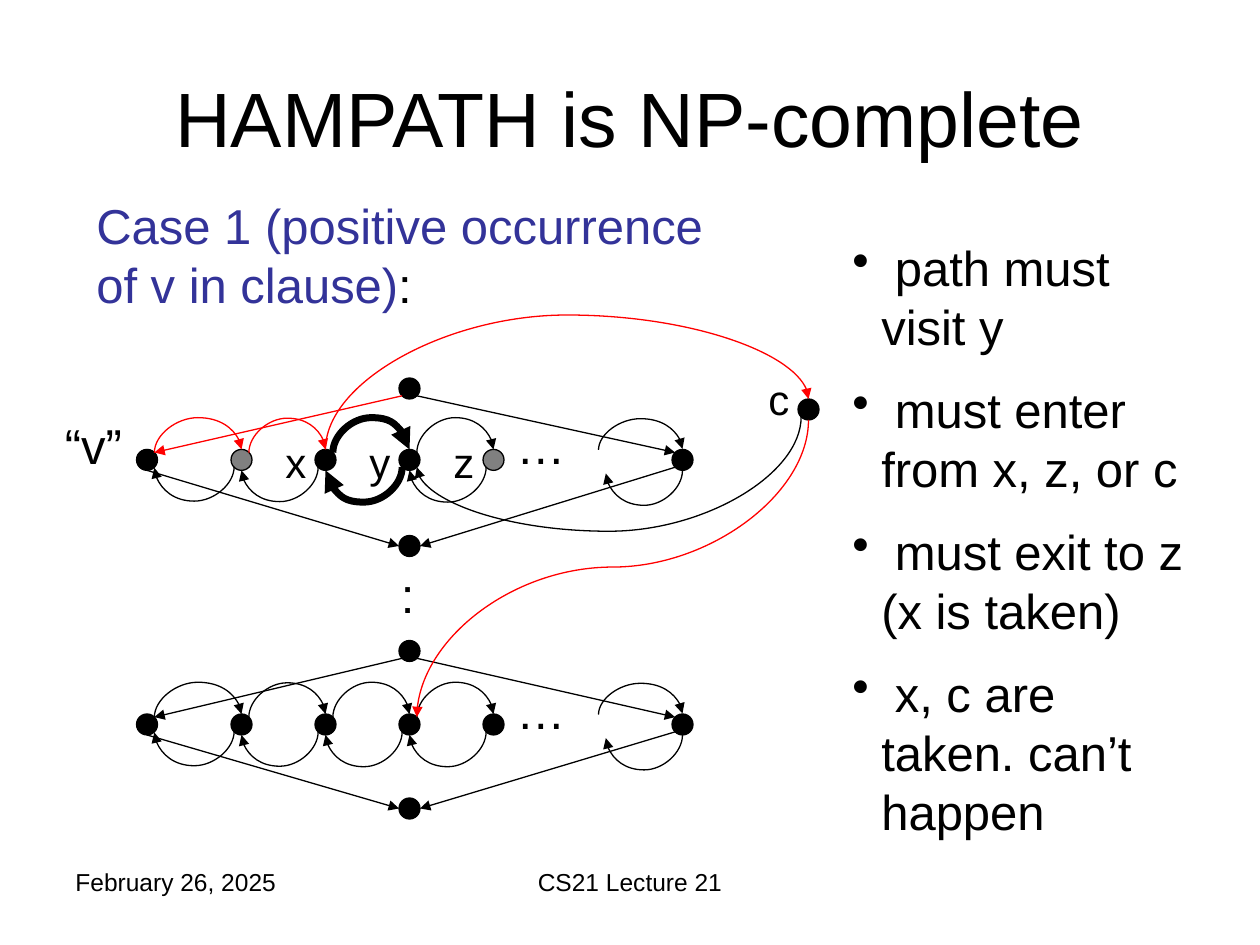
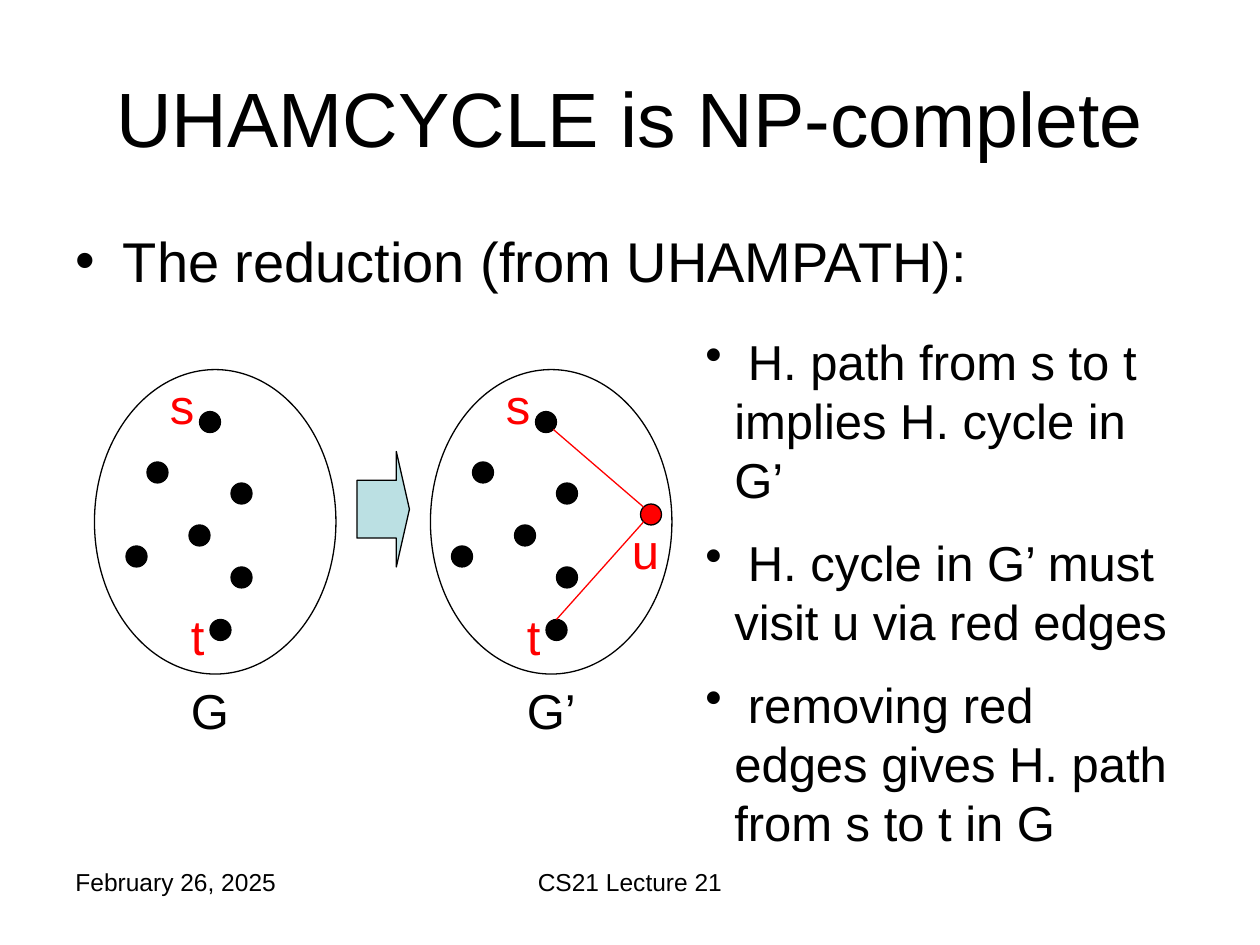
from lxml.etree import SubElement
from pptx import Presentation
from pptx.dml.color import RGBColor
from pptx.enum.shapes import MSO_CONNECTOR, MSO_SHAPE
from pptx.enum.text import MSO_ANCHOR, MSO_AUTO_SIZE, PP_ALIGN
from pptx.oxml.ns import qn
from pptx.util import Inches, Pt

CELLS_PER_INCH = 12
FONT = "Arial"
COLORS = {"ink": "000000", "red": "FF0000", "gray": "808080", "blue": "333399", "arrow": "BBE0E3"}

FOOTERS = [
    ("February 26, 2025", (6, 82, 28, 6.2), PP_ALIGN.LEFT),
    ("CS21 Lecture 21", (41, 82, 38, 6.2), PP_ALIGN.CENTER),
]
TITLE_BOX = (6, 3.6, 108, 15)

HAMPATH = {
    "title": "HAMPATH is NP-complete",
    "case": [("Case 1 (positive occurrence of v in clause)", "blue"), (":", "ink")],
    "notes": [
        " path must visit y",
        " must enter from x, z, or c",
        " must exit to z (x is taken)",
        " x, c are taken. can’t happen",
    ],
    "labels": [
        ("c", (72, 35, 4, 6), 24),
        ("x", (26, 41, 4, 6), 24),
        ("y", (34, 41, 4, 6), 24),
        ("z", (42, 41, 4, 6), 24),
        ("“v”", (5, 39, 9, 6.8), 28),
        (":", (37, 53.2, 5, 6.8), 28),
    ],
}
CHAIN_COLUMNS = [13, 22, 30, 38, 46, 64]
HUB_COLUMN = 38
CHAINS = [
    {"apex": 36, "row": 42.8, "base": 51, "gray": {1, 4}, "red": {0, 1}, "thick": 2, "apex_link": "red"},
    {"apex": 61, "row": 68, "base": 76, "gray": set(), "red": set(), "thick": None, "apex_link": "ink"},
]
CLAUSE = (76, 38)

UHAMCYCLE = {
    "title": "UHAMCYCLE is NP-complete",
    "body": "The reduction (from UHAMPATH):",
    "notes": [
        " H. path from s to t implies H. cycle in G’",
        " H. cycle in G’ must visit u via red edges",
        " removing red edges gives H. path from s to t in G",
    ],
    "graphs": [("G", 0, 0), ("G’", 32, 31)],
}
S_DOT, T_DOT, U_DOT = (19, 39.2), (20, 59), (61, 48)
INNER_DOTS = [(14, 44), (22, 46), (18, 50), (12, 52), (22, 54)]

DOT = 2
ANCHORS = {
    "top": (1, 0), "bottom": (1, 2), "left": (0, 1), "right": (2, 1),
    "top_left": (0.3, 0.3), "top_right": (1.7, 0.3),
    "bottom_left": (0.3, 1.7), "bottom_right": (1.7, 1.7),
}


def cells(*values):
    return [Inches(value / CELLS_PER_INCH) for value in values]


def rgb(name):
    return RGBColor.from_string(COLORS[name])


def anchor(dot, side):
    dx, dy = ANCHORS[side]
    return dot[0] + dx, dot[1] + dy


def add_run(paragraph, text, size, color="ink"):
    run = paragraph.add_run()
    run.text = text
    run.font.name = FONT
    run.font.size = Pt(size)
    run.font.color.rgb = rgb(color)


def add_text(slide, box, runs, size, align=PP_ALIGN.LEFT, grow=True):
    frame = slide.shapes.add_textbox(*cells(*box)).text_frame
    frame.word_wrap = True
    if grow:
        frame.auto_size = MSO_AUTO_SIZE.SHAPE_TO_FIT_TEXT
    frame.paragraphs[0].alignment = align
    for text, color in runs:
        add_run(frame.paragraphs[0], text, size, color)
    return frame


def add_notes(slide, box, notes):
    frame = add_text(slide, box, [], 28)
    for index, note in enumerate(notes):
        paragraph = frame.add_paragraph() if index else frame.paragraphs[0]
        if index:
            paragraph.space_before = Pt(14)
        properties = paragraph._p.get_or_add_pPr()
        properties.set("marL", str(Inches(0.23)))
        properties.set("indent", str(-Inches(0.23)))
        SubElement(properties, qn("a:buChar")).set("char", "•")
        add_run(paragraph, note, 28)


def add_shape(slide, kind, box, fill=None):
    shape = slide.shapes.add_shape(kind, *cells(*box))
    shape.shadow.inherit = False
    if fill:
        shape.fill.solid()
        shape.fill.fore_color.rgb = rgb(fill)
    else:
        shape.fill.background()
    shape.line.color.rgb = rgb("ink")
    shape.line.width = Pt(0.75)
    return shape


def add_dot(slide, dot, fill="ink"):
    add_shape(slide, MSO_SHAPE.OVAL, (*dot, DOT, DOT), fill)


def add_link(slide, start, end, color="ink", width=0.75, arrow=True, kind=MSO_CONNECTOR.STRAIGHT):
    link = slide.shapes.add_connector(kind, *cells(*start, *end))
    link.line.color.rgb = rgb(color)
    link.line.width = Pt(width)
    if arrow:
        SubElement(link.line._get_or_add_ln(), qn("a:tailEnd")).set("type", "triangle")
    SubElement(link._element.spPr, qn("a:effectLst"))
    return link


def add_arc(slide, start, end, level, color="ink", width=0.75):
    (x1, y1), (x2, y2) = start, end
    rightward = x2 > x1
    rise, span = max(abs(y2 - y1), 0.1), abs(x2 - x1)
    left, top = (x1 + x2 - rise) / 2, (y1 + y2 - span) / 2
    arc = add_link(slide, (left, top), (left + rise, top + span), color, width, kind=MSO_CONNECTOR.CURVE)
    arc.rotation = 270 if rightward else 90
    bend = SubElement(arc._element.spPr.find(".//" + qn("a:avLst")), qn("a:gd"))
    bend.set("name", "adj1")
    bend.set("fmla", f"val {round(abs(level - y1) / rise * 100000)}")


def start_slide(deck, layout, title):
    slide = deck.slides.add_slide(deck.slide_layouts[layout])
    for text, box, align in FOOTERS:
        add_text(slide, box, [(text, "ink")], 14, align, grow=False)
    heading = slide.shapes.title
    heading.left, heading.top, heading.width, heading.height = cells(*TITLE_BOX)
    heading.text_frame.vertical_anchor = MSO_ANCHOR.MIDDLE
    heading.text_frame.paragraphs[0].alignment = PP_ALIGN.CENTER
    add_run(heading.text_frame.paragraphs[0], title, 44)
    return slide


def draw_chain(slide, chain):
    row = chain["row"]
    nodes = [(column, row) for column in CHAIN_COLUMNS]
    first, last = nodes[0], nodes[-1]
    apex, base = (HUB_COLUMN, chain["apex"]), (HUB_COLUMN, chain["base"])
    for index, node in enumerate(nodes):
        add_dot(slide, node, "gray" if index in chain["gray"] else "ink")
    add_dot(slide, apex)
    add_dot(slide, base)
    for source, out, target, into, color in [
        (apex, "bottom_left", first, "top_right", chain["apex_link"]),
        (apex, "bottom_right", last, "top_left", "ink"),
        (first, "bottom", base, "left", "ink"),
        (last, "bottom_left", base, "right", "ink"),
    ]:
        add_link(slide, anchor(source, out), anchor(target, into), color)
    for index, (node, following) in enumerate(zip(nodes[:-2], nodes[1:-1])):
        width = 4 if index == chain["thick"] else 0.75
        color = "red" if index in chain["red"] else "ink"
        add_arc(slide, anchor(node, "top_right"), anchor(following, "top"), row - 3, color, width)
        back = "bottom" if index else "bottom_right"
        add_arc(slide, anchor(following, "bottom_left"), anchor(node, back), row + 5, "ink", width)
    add_arc(slide, (57, row), anchor(last, "top"), row - 3)
    add_arc(slide, anchor(last, "bottom"), (57.7, row + 2.3), row + 5.3)
    add_text(slide, (48, row - 3.8, 9, 6.8), [("…", "ink")], 28)
    return nodes


def build_hampath(deck):
    slide = start_slide(deck, 5, HAMPATH["title"])
    upper, lower = [draw_chain(slide, chain) for chain in CHAINS]
    x, y, lower_y = upper[2], upper[3], lower[3]
    add_dot(slide, CLAUSE)
    add_arc(slide, anchor(x, "top"), anchor(CLAUSE, "top"), 30, "red")
    add_arc(slide, anchor(CLAUSE, "bottom"), anchor(lower_y, "top_right"), 54, "red")
    add_arc(slide, anchor(CLAUSE, "bottom_left"), anchor(y, "bottom_right"), 50.6)
    add_text(slide, (8, 18, 63, 12.4), HAMPATH["case"], 28)
    for text, box, size in HAMPATH["labels"]:
        add_text(slide, box, [(text, "ink")], size)
    add_notes(slide, (80, 22, 35, 54.5), HAMPATH["notes"])


def build_uhamcycle(deck):
    slide = start_slide(deck, 1, UHAMCYCLE["title"])
    body = slide.placeholders[1]
    body.left, body.top, body.width, body.height = cells(6, 21, 108, 59.4)
    add_run(body.text_frame.paragraphs[0], UHAMCYCLE["body"], 32)
    for name, shift, inner_shift in UHAMCYCLE["graphs"]:
        add_shape(slide, MSO_SHAPE.OVAL, (9 + shift, 35.2, 23, 29))
        for column, row in (S_DOT, T_DOT):
            add_dot(slide, (column + shift, row))
        for column, row in INNER_DOTS:
            add_dot(slide, (column + inner_shift, row))
        for text, column, row, width, color in [
            ("s", 15, 35.2, 5, "red"), ("t", 17, 57.2, 5, "red"), (name, 17, 64.2, 9, "ink"),
        ]:
            add_text(slide, (column + shift, row, width, 6.8), [(text, color)], 28)
    s, t = [(column + shift, row) for column, row in (S_DOT, T_DOT)]
    add_dot(slide, U_DOT, "red")
    add_link(slide, anchor(s, "bottom_right"), anchor(U_DOT, "top_left"), "red", arrow=False)
    add_link(slide, anchor(U_DOT, "bottom_left"), anchor(t, "top"), "red", arrow=False)
    add_text(slide, (59, 49, 5, 6.8), [("u", "red")], 28)
    reduction = add_shape(slide, MSO_SHAPE.RIGHT_ARROW, (34, 43, 5, 11), "arrow")
    reduction.adjustments[0], reduction.adjustments[1] = 0.5, 0.25
    add_notes(slide, (66, 31, 47, 46), UHAMCYCLE["notes"])


def main():
    deck = Presentation()
    deck.slide_width, deck.slide_height = Inches(10), Inches(7.5)
    build_hampath(deck)
    build_uhamcycle(deck)
    deck.save("out.pptx")


if __name__ == "__main__":
    main()
